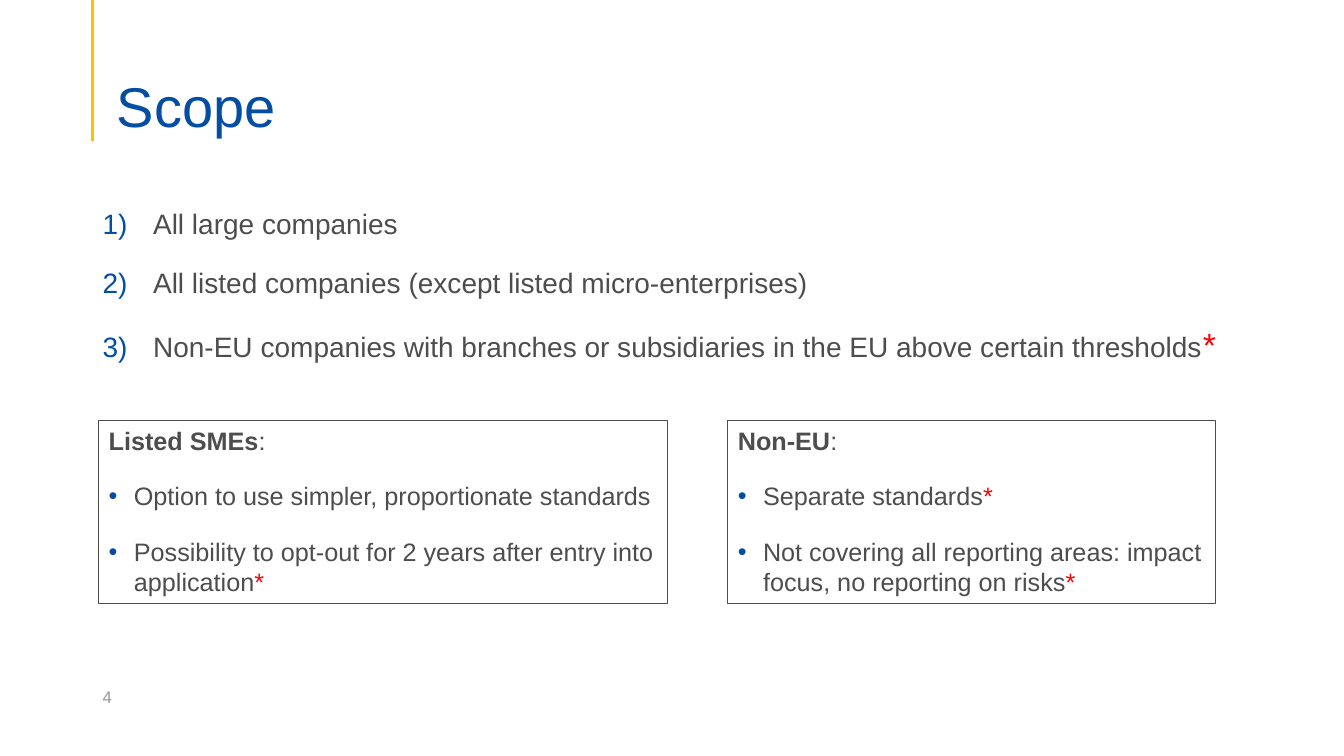
from lxml import etree
from pptx import Presentation
from pptx import util as u
from pptx.dml.color import RGBColor
from pptx.enum import shapes, text
from pptx.oxml.ns import qn

COLORS = {
    "blue": "034EA2",
    "yellow": "FFC000",
    "body": "4D4D4D",
    "star": "FF0000",
    "number": "979797",
}
FONT = "Arial"

SCOPE = [
    "All large companies",
    "All listed companies (except listed micro-enterprises)",
    "Non-EU companies with branches or subsidiaries in the EU above certain thresholds*",
]
# Heading, left, width, points; a closing asterisk is shown in red
PANELS = [
    ("Listed SMEs", 0.98, 5.64, [
        "Option to use simpler, proportionate standards",
        "Possibility to opt-out for 2 years after entry into application*",
    ]),
    ("Non-EU", 7.22, 4.84, [
        "Separate standards*",
        "Not covering all reporting areas: impact focus, no reporting on risks*",
    ]),
]


def rgb(name):
    return RGBColor.from_string(COLORS[name])


def set_font(paragraph, size, color):
    font = paragraph.font
    font.name, font.size = FONT, u.Pt(size)
    font.color.rgb = rgb(color)


def add_text(slide, box, content, size, color, anchor):
    label = slide.shapes.add_textbox(*map(u.Inches, box)).text_frame
    label.word_wrap = True
    label.vertical_anchor = anchor
    label.text = content
    set_font(label.paragraphs[0], size, color)
    return label


def set_marker(paragraph, indent, tag, **attributes):
    """Give the paragraph a hanging blue bullet or number."""
    props = paragraph._p.get_or_add_pPr()
    props.set("marL", str(u.Inches(indent)))
    props.set("indent", str(-u.Inches(indent)))
    color = etree.SubElement(props, qn("a:buClr"))
    etree.SubElement(color, qn("a:srgbClr"), val=COLORS["blue"])
    etree.SubElement(props, qn("a:buFont"), typeface=FONT)
    etree.SubElement(props, qn(tag), **attributes)


def fill_item(paragraph, content, size, star_size, indent, tag, **attributes):
    paragraph.space_after = u.Pt(18)
    set_marker(paragraph, indent, tag, **attributes)
    set_font(paragraph, size, "body")
    paragraph.add_run().text = content.rstrip("*")
    if content.endswith("*"):
        star = paragraph.add_run()
        star.text = "*"
        star.font.size = u.Pt(star_size)
        star.font.color.rgb = rgb("star")


def add_accent_line(slide):
    x = u.Inches(0.92)
    accent = slide.shapes.add_connector(
        shapes.MSO_CONNECTOR.STRAIGHT, x, 0, x, u.Inches(1.4))
    accent.line.color.rgb = rgb("yellow")
    accent.line.width = u.Pt(2.25)
    etree.SubElement(accent._element.spPr, qn("a:effectLst"))


def add_scope_list(slide):
    box = (0.92, 2, 11.54, 1.82)
    frame = slide.shapes.add_textbox(*map(u.Inches, box)).text_frame
    frame.word_wrap = True
    for i, item in enumerate(SCOPE):
        paragraph = frame.add_paragraph() if i else frame.paragraphs[0]
        fill_item(paragraph, item, 20, 24, 0.5, "a:buAutoNum", type="arabicParenR")


def add_panel(slide, heading, left, width, points):
    panel = slide.shapes.add_shape(
        shapes.MSO_SHAPE.RECTANGLE,
        *map(u.Inches, (left, 4.17, width, 1.82)))
    panel.shadow.inherit = False
    panel.fill.background()
    panel.line.color.rgb = rgb("body")
    panel.line.width = u.Pt(0.75)

    frame = panel.text_frame
    frame.word_wrap = True
    frame.auto_size = text.MSO_AUTO_SIZE.SHAPE_TO_FIT_TEXT
    frame.vertical_anchor = text.MSO_ANCHOR.TOP
    title = frame.paragraphs[0]
    title.space_after = u.Pt(18)
    set_font(title, 18, "body")
    name = title.add_run()
    name.text = heading
    name.font.bold = True
    title.add_run().text = ":"
    for point in points:
        fill_item(frame.add_paragraph(), point, 18, 18, 0.25, "a:buChar", char="•")
    for paragraph in frame.paragraphs:
        paragraph.alignment = text.PP_ALIGN.LEFT


def main():
    deck = Presentation()
    deck.slide_width, deck.slide_height = u.Inches(13.33), u.Inches(7.5)
    slide = deck.slides.add_slide(deck.slide_layouts[6])

    # Title with its accent line
    add_accent_line(slide)
    title = add_text(slide, (1.06, 0.53, 11.5, 0.86), "Scope", 40, "blue",
                     text.MSO_ANCHOR.BOTTOM)
    title.margin_bottom = 0
    title.paragraphs[0].line_spacing = 0.9

    # Numbered scope and the two detail panels
    add_scope_list(slide)
    for panel in PANELS:
        add_panel(slide, *panel)

    # Page number
    add_text(slide, (0.92, 6.71, 3, 0.4), "4", 12, "number",
             text.MSO_ANCHOR.MIDDLE)
    deck.save("out.pptx")


if __name__ == "__main__":
    main()
